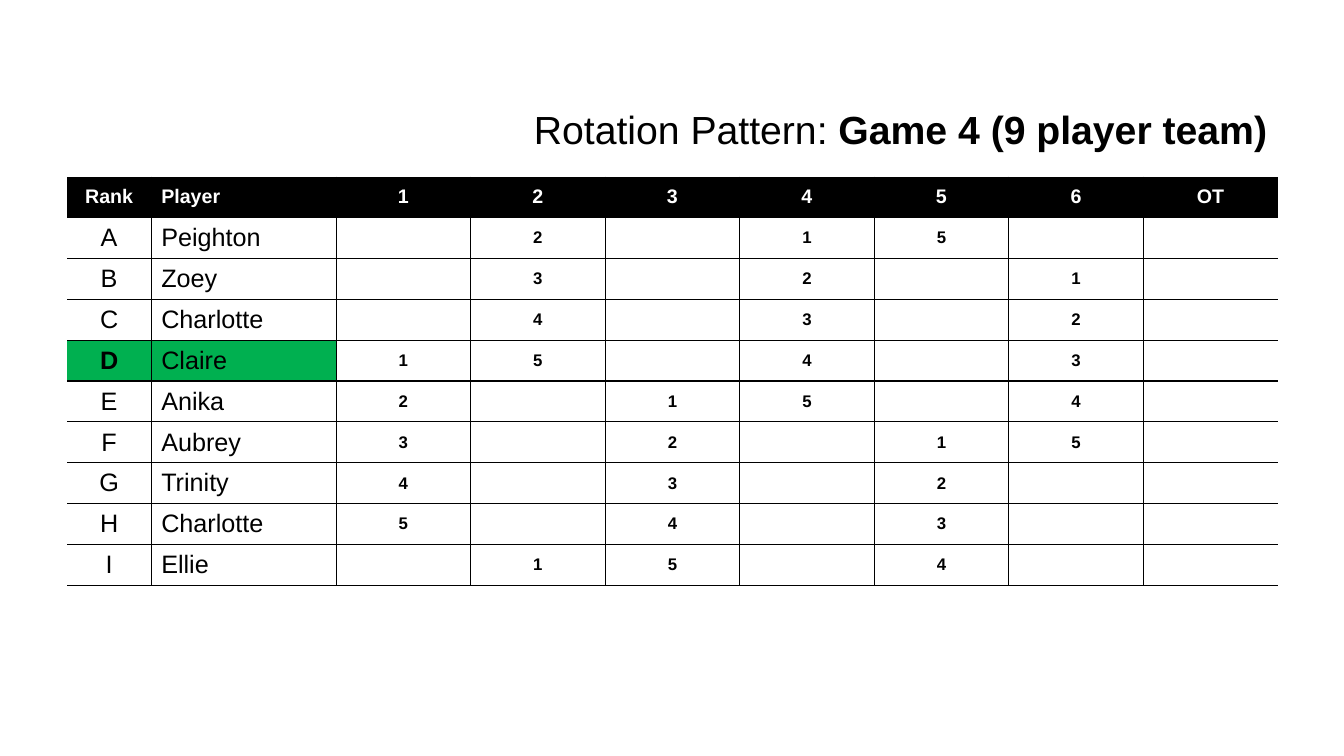
import pptx
import pptx.util
import pptx.dml.color
import pptx.enum.text
import pptx.oxml
import pptx.oxml.ns

Cm, Pt = pptx.util.Cm, pptx.util.Pt
RGB = pptx.dml.color.RGBColor.from_string
ALIGN = pptx.enum.text.PP_ALIGN

theme = {
    "font": "Arial",
    "ink": "000000",
    "paper": "FFFFFF",
    "mark": "00B050",
    "title": 28,
    "head": 14,
    "name": 18,
    "turn": 12,
}


def write(para, text, size, color, bold):
    run = para.add_run()
    run.text = text
    style = {"name": theme["font"], "size": Pt(theme[size]), "bold": bold}
    for key, value in style.items():
        setattr(run.font, key, value)
    run.font.color.rgb = RGB(theme[color])


def edge(cell, side, shown):
    color = theme["ink"]
    paint = f'<a:solidFill><a:srgbClr val="{color}"/></a:solidFill>' if shown else "<a:noFill/>"
    space = pptx.oxml.ns.nsdecls("a")
    line = f'<a:ln{side} {space} w="{Pt(1)}">{paint}</a:ln{side}>'
    cell._tc.get_or_add_tcPr().append(pptx.oxml.parse_xml(line))


deck = pptx.Presentation()
deck.slide_width, deck.slide_height = Cm(33.87), Cm(19.05)
slide = deck.slides.add_slide(deck.slide_layouts[6])

names = ["Peighton", "Zoey", "Charlotte", "Claire", "Anika",
         "Aubrey", "Trinity", "Charlotte", "Ellie"]
shifts, spots, first = 6, 5, 3

grid = [["Rank", "Player", *map(str, range(1, shifts + 1)), "OT"]]
for rank, name in zip("ABCDEFGHI", names):
    grid.append([rank, name] + [""] * (shifts + 1))
for turn in range(shifts * spots):
    shift, spot = divmod(turn, spots)
    player = (first + turn) % len(names)
    grid[player + 1][shift + 2] = str(spot + 1)

widths = [2.12, 4.66] + [3.39] * (shifts + 1)
height = 1.03
frame = slide.shapes.add_table(len(grid), len(widths), Cm(1.69), Cm(4.45),
                               Cm(sum(widths)), Cm(height * len(grid)))
table = frame.table
for flag in ("first_row", "horz_banding"):
    setattr(table, flag, False)
for col, width in zip(table.columns, widths):
    col.width = Cm(width)
for row in table.rows:
    row.height = Cm(height)

for r, row in enumerate(grid):
    for c, text in enumerate(row):
        cell = table.cell(r, c)
        head, label, lead = r == 0, c < 2, r == first + 1
        edges = {"L": c > 0, "R": c < len(row) - 1, "T": r > 0, "B": True}
        for side, shown in edges.items():
            edge(cell, side, shown)
        cell.fill.solid()
        fill = "ink" if head else "mark" if lead and label else "paper"
        cell.fill.fore_color.rgb = RGB(theme[fill])
        cell.vertical_anchor = pptx.enum.text.MSO_ANCHOR.MIDDLE
        para = cell.text_frame.paragraphs[0]
        para.alignment = ALIGN.LEFT if c == 1 else ALIGN.CENTER
        if text:
            size = "head" if head else "name" if label else "turn"
            bold = head or not label or (lead and c == 0)
            write(para, text, size, "paper" if head else "ink", bold)

title = slide.shapes.add_textbox(Cm(9.95), Cm(2.54), Cm(22.23), Cm(1.45))
title.text_frame.word_wrap = True
para = title.text_frame.paragraphs[0]
para.alignment = ALIGN.RIGHT
write(para, "Rotation Pattern:", "title", "ink", False)
write(para, " Game 4 (9 player team)", "title", "ink", True)

deck.save("out.pptx")
